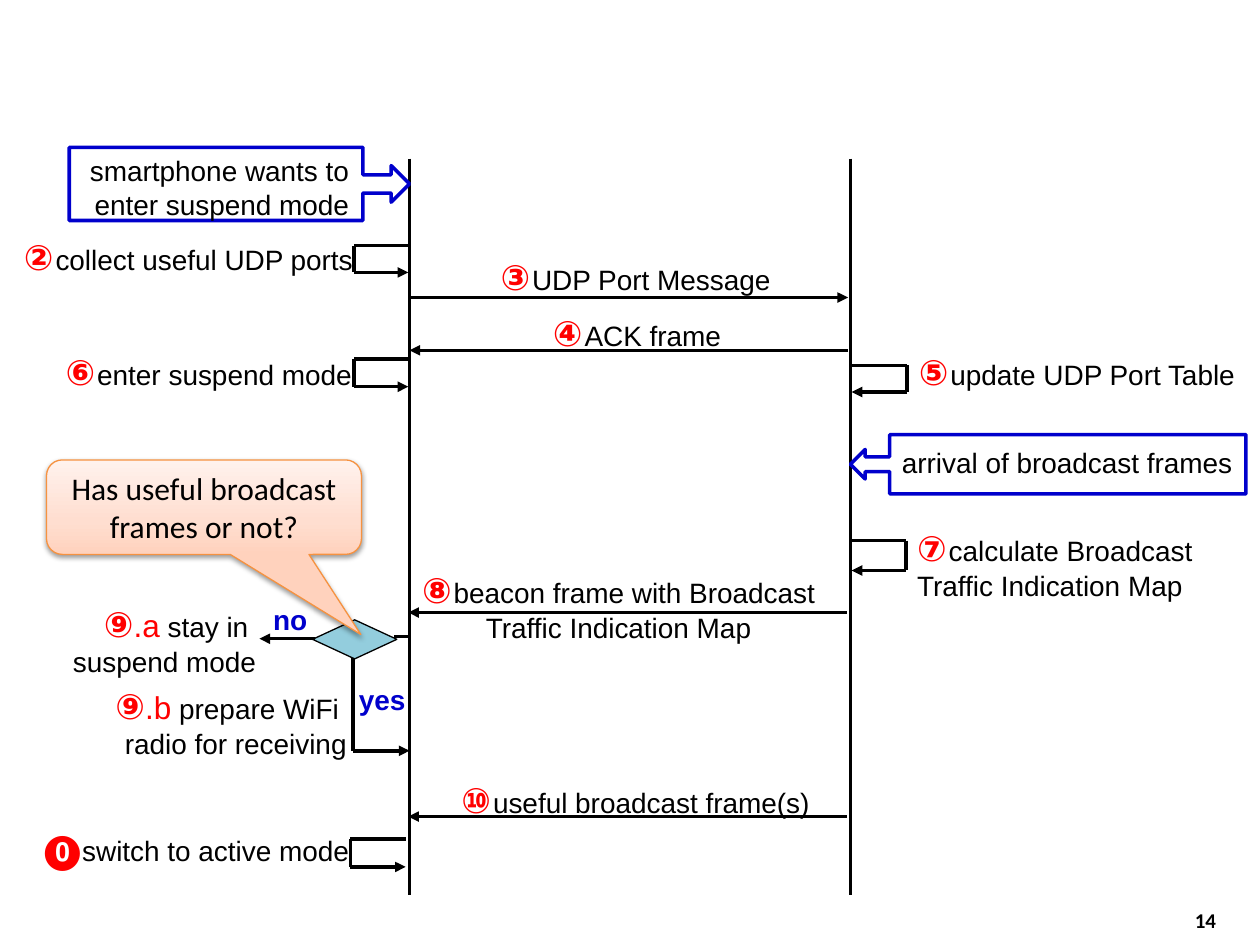
"""Build the message sequence slide for broadcast-aware suspend mode."""
from dataclasses import dataclass

from lxml import etree
from pptx import Presentation
from pptx.dml.color import RGBColor
from pptx.enum import shapes, text
from pptx.oxml import ns
from pptx.util import Pt

LEFT, CENTER, RIGHT = text.PP_ALIGN.LEFT, text.PP_ALIGN.CENTER, text.PP_ALIGN.RIGHT
PHONE, ACCESS_POINT = 234, 486


@dataclass(frozen=True)
class Theme:
    black: str = "000000"
    white: str = "FFFFFF"
    red: str = "FF0000"
    blue: str = "0000CC"
    teal: str = "93CDDD"
    orange: str = "F69240"
    peach: tuple = ((0, "FFD2BD"), (35, "FFDED0"), (100, "FFF2ED"))
    font: str = "Arial"
    callout_font: str = "Calibri"
    badge: float = 20
    large: float = 18
    body: float = 16
    small: float = 12
    gap: float = 4
    stroke: float = 2
    lifeline: float = 1.5
    thin: float = 0.75


THEME = Theme()


def add_xml(parent, tag, **attributes):
    """Append a DrawingML element."""
    return etree.SubElement(parent, ns.qn(tag), attributes)


def add_span(para, words, size=THEME.body, color=THEME.black, bold=False, font=THEME.font):
    """Append one formatted run."""
    span = para.add_run()
    span.text = words
    span.font.size = Pt(size)
    span.font.name = font
    span.font.bold = bold
    span.font.color.rgb = RGBColor.from_string(color)


def add_label(slide, frame, words, align=LEFT, **style):
    """Add a wrapped text box holding one plain paragraph."""
    box = slide.shapes.add_textbox(*map(Pt, frame))
    box.text_frame.word_wrap = True
    para = box.text_frame.paragraphs[0]
    para.alignment = align
    if words:
        add_span(para, words, **style)
    return box


def add_step(slide, frame, number, words, align):
    """Add a step label: red number followed by its description."""
    para = add_label(slide, frame, "", align).text_frame.paragraphs[0]
    add_span(para, number, THEME.badge, THEME.red, True)
    add_span(para, " ", THEME.gap, THEME.red, True)
    add_span(para, words)


def add_branch(slide, frame, letter, first, second):
    """Add a two-line label for one outcome of the decision."""
    box = add_label(slide, frame, "", RIGHT)
    para = box.text_frame.paragraphs[0]
    add_span(para, "⑨", THEME.badge, THEME.red, True)
    add_span(para, letter, THEME.large, THEME.red)
    add_span(para, " " + first)
    para = box.text_frame.add_paragraph()
    para.alignment = RIGHT
    add_span(para, second)


def add_line(slide, start, end, arrow=False, width=THEME.stroke):
    """Draw a straight line, with an arrowhead at its end if asked."""
    line = slide.shapes.add_connector(
        shapes.MSO_CONNECTOR.STRAIGHT, *map(Pt, (*start, *end)))
    line.line.width = Pt(width)
    line.line.color.rgb = RGBColor.from_string(THEME.black)
    if arrow:
        add_xml(line.line._get_or_add_ln(), "a:tailEnd", type="triangle")
    add_xml(line._element.spPr, "a:effectLst")


def add_loop(slide, edge, outer, top, bottom):
    """Draw a self-message that leaves a lifeline and returns to it."""
    add_line(slide, (edge, top), (outer, top))
    add_line(slide, (outer, top), (outer, bottom))
    add_line(slide, (outer, bottom), (edge, bottom), arrow=True)


def add_figure(slide, kind, frame, fill, line, width, adjustments=()):
    """Add a preset shape without shadow."""
    figure = slide.shapes.add_shape(kind, *map(Pt, frame))
    for index, value in enumerate(adjustments):
        figure.adjustments[index] = value
    figure.shadow.inherit = False
    figure.fill.solid()
    figure.fill.fore_color.rgb = RGBColor.from_string(fill)
    figure.line.color.rgb = RGBColor.from_string(line)
    figure.line.width = Pt(width)
    return figure


def add_event(slide, frame, body_share, flipped=False):
    """Add an outlined arrow callout that points at a lifeline."""
    event = add_figure(slide, shapes.MSO_SHAPE.RIGHT_ARROW_CALLOUT, frame, THEME.white,
                       THEME.blue, THEME.stroke, (0.25, 0.25, 0.25, body_share))
    if flipped:
        event._element.spPr.xfrm.set("flipH", "1")


def add_question(slide, frame, words):
    """Add the shaded speech bubble that points at the decision."""
    bubble = add_figure(slide, shapes.MSO_SHAPE.ROUNDED_RECTANGULAR_CALLOUT, frame,
                        THEME.white, THEME.orange, THEME.thin, (0.498, 1.348, 0.167))
    bubble.fill.gradient()
    bubble.fill.gradient_angle = 90
    stops = bubble._element.spPr.find(".//" + ns.qn("a:gsLst"))
    for stop in list(stops):
        stops.remove(stop)
    for position, color in THEME.peach:
        stop = add_xml(stops, "a:gs", pos=str(position * 1000))
        add_xml(stop, "a:srgbClr", val=color)
    effects = bubble._element.spPr.find(ns.qn("a:effectLst"))
    shadow = add_xml(effects, "a:outerShdw", blurRad=str(Pt(3.1)), dist=str(Pt(1.6)),
                     dir="5400000", rotWithShape="0")
    tint = add_xml(shadow, "a:srgbClr", val=THEME.black)
    add_xml(tint, "a:alpha", val="38000")
    bubble.text_frame.word_wrap = True
    bubble.text_frame.vertical_anchor = text.MSO_ANCHOR.MIDDLE
    para = bubble.text_frame.paragraphs[0]
    para.alignment = CENTER
    add_span(para, words, THEME.large, font=THEME.callout_font)


def add_decision(slide):
    """Draw the decision diamond with its two outcomes."""
    add_figure(slide, shapes.MSO_SHAPE.DIAMOND, (178.6, 354.2, 48.2, 22.3),
               THEME.teal, THEME.black, THEME.thin)
    add_line(slide, (225.4, 363.6), (PHONE, 363.6))
    add_line(slide, (180, 365), (148.3, 365), arrow=True)
    add_line(slide, (201.6, 376), (201.6, 429))
    add_line(slide, (201.6, 429), (PHONE, 429), arrow=True)
    add_label(slide, (149, 340.6, 36.7, 26.6), "no", color=THEME.blue, bold=True)
    add_label(slide, (198, 386.6, 48.2, 26.6), "yes", color=THEME.blue, bold=True)
    add_branch(slide, (-10.8, 340.6, 164.2, 51.1), ".a", "stay in ", "suspend mode")
    add_branch(slide, (41, 387.4, 164.2, 51.1), ".b", "prepare WiFi ", "radio for receiving")


def main():
    """Build and save the slide."""
    deck = Presentation()
    deck.slide_width, deck.slide_height = Pt(720), Pt(540)
    slide = deck.slides.add_slide(deck.slide_layouts[6])

    number = add_label(slide, (534.2, 511.2, 167.8, 28.8), "14", RIGHT,
                       size=THEME.small, bold=True, font=THEME.callout_font)
    number.text_frame.vertical_anchor = text.MSO_ANCHOR.MIDDLE

    for lifeline in (PHONE, ACCESS_POINT):
        add_line(slide, (lifeline, 90.7), (lifeline, 511.2), width=THEME.lifeline)

    add_event(slide, (39.6, 84.2, 194.4, 41.8), 0.863)
    add_label(slide, (36, 84.2, 170.6, 46), "smartphone wants to enter suspend mode", RIGHT)
    add_event(slide, (486, 248.4, 226, 33.8), 0.901, flipped=True)
    add_label(slide, (508.3, 251.3, 221, 26.6), "arrival of broadcast frames")

    for edge, outer, top, bottom in (
            (233.3, 202.3, 140.4, 155.7), (233.3, 202.3, 205.2, 221),
            (486.7, 518.4, 208.8, 224), (486.7, 517.7, 308.9, 326),
            (231.8, 200.2, 479.5, 495.4)):
        add_loop(slide, edge, outer, top, bottom)

    for start, end, level in (
            (PHONE, 484.6, 170), (484.6, PHONE, 200.2),
            (484, 233.3, 350), (484, 233.3, 466.6)):
        add_line(slide, (start, level), (end, level), arrow=True)

    for frame, badge, words, align in (
            ((-25.2, 131, 234, 31.7), "②", "collect useful UDP ports", RIGHT),
            ((246.2, 142.6, 234, 31.7), "③", "UDP Port Message", CENTER),
            ((247, 174.2, 234, 31.7), "④", "ACK frame", CENTER),
            ((508.3, 196.6, 204.5, 31.7), "⑤", "update UDP Port Table", RIGHT),
            ((-25.9, 196.6, 234, 31.7), "⑥", "enter suspend mode", RIGHT),
            ((517, 297.4, 195.1, 51.1), "⑦",
             "calculate Broadcast Traffic Indication Map", LEFT),
            ((228.2, 321.1, 250.6, 51.1), "⑧",
             "beacon frame with Broadcast Traffic Indication Map", CENTER),
            ((246.2, 441.4, 234, 31.7), "⑩", "useful broadcast frame(s)", CENTER),
            ((-27.4, 468.7, 234, 31.7), "⓿", "switch to active mode", RIGHT)):
        add_step(slide, frame, badge, words, align)

    add_decision(slide)
    add_question(slide, (26.6, 262.8, 180, 54), "Has useful broadcast frames or not?")
    deck.save("out.pptx")


if __name__ == "__main__":
    main()
